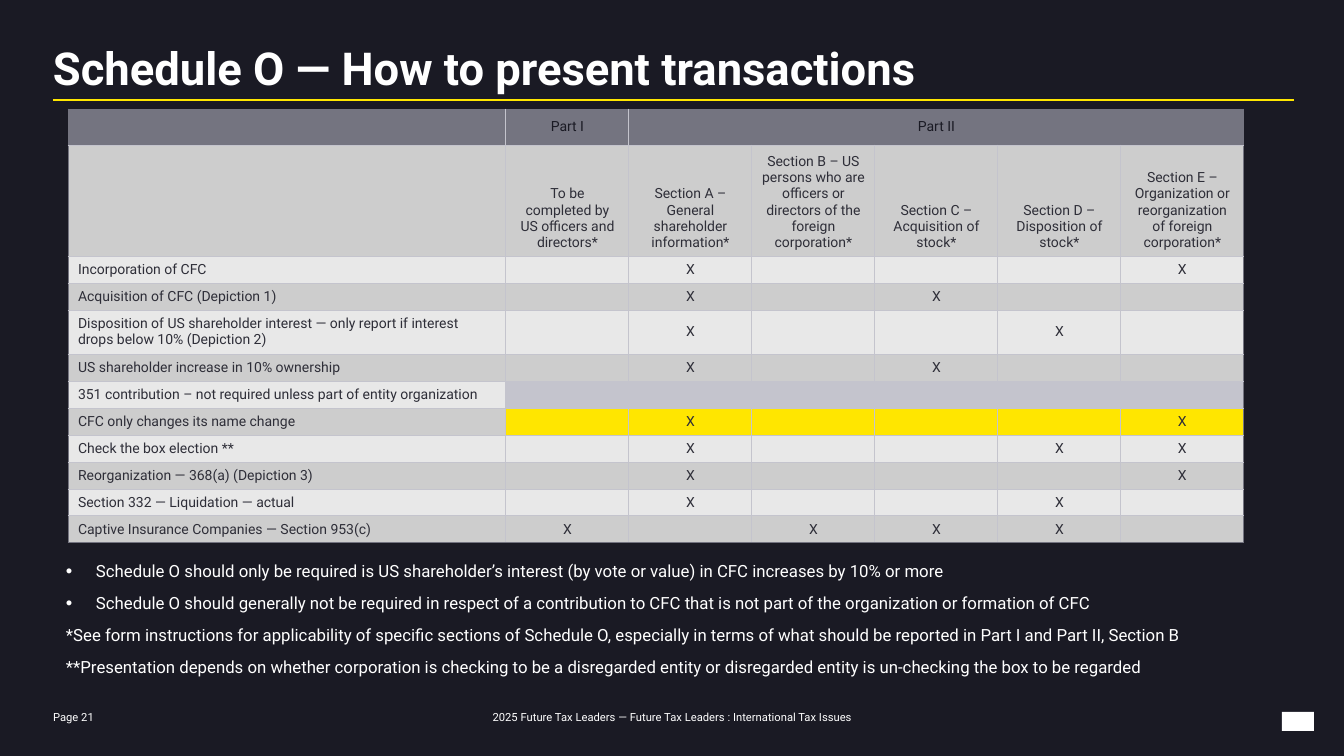
from dataclasses import dataclass

from lxml.etree import SubElement
from pptx import Presentation
from pptx.dml.color import RGBColor
from pptx.enum.shapes import MSO_CONNECTOR, MSO_SHAPE
from pptx.enum.text import MSO_ANCHOR as Anchor, PP_ALIGN as Align
from pptx.oxml.ns import qn
from pptx.util import Emu, Pt

TITLE = "Schedule O — How to present transactions"
PAGE = "Page 21"
FOOTER = "2025 Future Tax Leaders — Future Tax Leaders : International Tax Issues"
PARTS = ["", "Part I", "Part II"]
SECTIONS = [
    "",
    "To be completed by US officers and directors*",
    "Section A – General shareholder information*",
    "Section B – US persons who are officers or directors of the foreign corporation*",
    "Section C – Acquisition of stock*",
    "Section D – Disposition of stock*",
    "Section E – Organization or reorganization of foreign corporation*",
]
# Transaction and the columns marked with an X
TRANSACTIONS = [
    ("Incorporation of CFC", (2, 6)),
    ("Acquisition of CFC (Depiction 1)", (2, 4)),
    ("Disposition of US shareholder interest — only report if interest drops below 10% (Depiction 2)", (2, 5)),
    ("US shareholder increase in 10% ownership", (2, 4)),
    ("351 contribution – not required unless part of entity organization", ()),
    ("CFC only changes its name change", (2, 6)),
    ("Check the box election **", (2, 5, 6)),
    ("Reorganization — 368(a) (Depiction 3)", (2, 6)),
    ("Section 332 — Liquidation — actual", (2, 5)),
    ("Captive Insurance Companies — Section 953(c)", (1, 3, 4, 5)),
]
# Note and whether it has a bullet
NOTES = [
    ("Schedule O should only be required is US shareholder’s interest (by vote or value) in CFC increases by 10% or more", True),
    ("Schedule O should generally not be required in respect of a contribution to CFC that is not part of the organization or formation of CFC", True),
    ("*See form instructions for applicability of specific sections of Schedule O, especially in terms of what should be reported in Part I and Part II, Section B", False),
    ("**Presentation depends on whether corporation is checking to be a disregarded entity or disregarded entity is un-checking the box to be regarded", False),
]


@dataclass(frozen=True)
class Theme:
    font: str = "Roboto"
    background: str = "1A1A24"
    white: str = "FFFFFF"
    yellow: str = "FFE600"
    text: str = "2E2E38"
    header: str = "747480"
    grid: str = "C4C4CD"
    dark_band: str = "CDCDCD"
    light_band: str = "E8E8E8"
    title_size: float = 32.4
    note_size: float = 12
    table_size: float = 10
    footer_size: float = 8
    rule_width: float = 1.5
    border_width: float = 0.75


THEME = Theme()
ROW_FILLS = {6: THEME.grid, 7: THEME.yellow}
COLUMN_WIDTHS = [438] + [123] * 6
ROW_HEIGHTS = [36, 111, 27, 27, 44] + [27] * 7
LAST_ROW, LAST_COLUMN = len(ROW_HEIGHTS) - 1, len(COLUMN_WIDTHS) - 1
INDENT = 30


def px(length):
    return Emu(round(length * 914400 / 100.8))


def rgb(color):
    return RGBColor.from_string(color)


def write(paragraph, text, size, color, bold=False, align=Align.LEFT):
    paragraph.alignment = align
    run = paragraph.add_run()
    run.text = text
    run.font.color.rgb = rgb(color)
    for name, value in {"name": THEME.font, "size": Pt(size), "bold": bold}.items():
        setattr(run.font, name, value)


def add_text_frame(slide, box, anchor=Anchor.TOP):
    frame = slide.shapes.add_textbox(*map(px, box)).text_frame
    settings = {"word_wrap": True, "vertical_anchor": anchor, "margin_left": 0,
                "margin_right": 0, "margin_top": 0, "margin_bottom": 0}
    for name, value in settings.items():
        setattr(frame, name, value)
    return frame


def add_bullet(paragraph):
    properties = paragraph._p.get_or_add_pPr()
    properties.set("marL", str(px(INDENT)))
    properties.set("indent", str(-px(INDENT)))
    color = SubElement(properties, qn("a:buClr"))
    SubElement(color, qn("a:srgbClr"), val=THEME.white)
    SubElement(properties, qn("a:buSzPct"), val="110000")
    SubElement(properties, qn("a:buFont"), typeface="Arial")
    SubElement(properties, qn("a:buChar"), char="•")


def add_notes(slide):
    frame = add_text_frame(slide, (66, 561, 1235, 180))
    for index, (text, bulleted) in enumerate(NOTES):
        paragraph = frame.add_paragraph() if index else frame.paragraphs[0]
        write(paragraph, text, THEME.note_size, THEME.white)
        paragraph.space_before = Pt(0.2 * THEME.note_size)
        paragraph.space_after = Pt(6)
        if bulleted:
            add_bullet(paragraph)


def set_borders(cell, outer_edges):
    """Draw four borders; outer_edges tells which lie on the table's outline."""
    properties = cell._tc.get_or_add_tcPr()
    for edge, is_outer in outer_edges.items():
        line = SubElement(properties, qn(f"a:ln{edge}"), w=str(Pt(THEME.border_width)))
        fill = SubElement(line, qn("a:solidFill"))
        SubElement(fill, qn("a:srgbClr"), val=THEME.header if is_outer else THEME.grid)


def cell_fill(row, column):
    if row == 0:
        return THEME.header
    if column and row in ROW_FILLS:
        return ROW_FILLS[row]
    return THEME.dark_band if row % 2 else THEME.light_band


def fill_cell(cell, row, column, text):
    right = LAST_COLUMN if cell.is_merge_origin else column
    set_borders(cell, {"L": column == 0, "R": right == LAST_COLUMN,
                       "T": row == 0, "B": row == LAST_ROW})
    cell.fill.solid()
    cell.fill.fore_color.rgb = rgb(cell_fill(row, column))
    cell.vertical_anchor = Anchor.BOTTOM if row == 1 else Anchor.MIDDLE
    paragraph = cell.text_frame.paragraphs[0]
    if text:
        write(paragraph, text, THEME.table_size, THEME.text if row else THEME.background,
              align=Align.CENTER if column else Align.LEFT)
    else:
        SubElement(paragraph._p, qn("a:endParaRPr"), sz=str(int(THEME.table_size * 100)))


def add_transactions_table(slide):
    marked_rows = [[label] + ["X" if column in marks else "" for column in range(1, LAST_COLUMN + 1)]
                   for label, marks in TRANSACTIONS]
    rows = [PARTS + [""] * (LAST_COLUMN + 1 - len(PARTS)), SECTIONS] + marked_rows
    table = slide.shapes.add_table(len(rows), len(COLUMN_WIDTHS), px(68), px(109),
                                   px(sum(COLUMN_WIDTHS)), px(sum(ROW_HEIGHTS))).table
    table.first_row = table.horz_banding = False
    for column, width in zip(table.columns, COLUMN_WIDTHS):
        column.width = px(width)
    for row, height in zip(table.rows, ROW_HEIGHTS):
        row.height = px(height)
    table.cell(0, 2).merge(table.cell(0, LAST_COLUMN))
    for row, texts in enumerate(rows):
        for column, text in enumerate(texts):
            fill_cell(table.cell(row, column), row, column, text)


def add_title_rule(slide):
    rule = slide.shapes.add_connector(MSO_CONNECTOR.STRAIGHT, px(53), px(100), px(1294), px(100))
    rule.line.color.rgb = rgb(THEME.yellow)
    rule.line.width = Pt(THEME.rule_width)
    SubElement(rule._element.spPr, qn("a:effectLst"))


def add_corner_mark(slide):
    mark = slide.shapes.add_shape(MSO_SHAPE.RECTANGLE, px(1282), px(712), px(32), px(19))
    mark.shadow.inherit = False
    mark.fill.solid()
    mark.fill.fore_color.rgb = rgb(THEME.white)
    mark.line.fill.background()


def main():
    presentation = Presentation()
    presentation.slide_width, presentation.slide_height = px(1344), px(756)
    slide = presentation.slides.add_slide(presentation.slide_layouts[6])
    slide.background.fill.solid()
    slide.background.fill.fore_color.rgb = rgb(THEME.background)

    footer = add_text_frame(slide, (486, 710, 373, 14), Anchor.MIDDLE)
    write(footer.paragraphs[0], FOOTER, THEME.footer_size, THEME.white, align=Align.CENTER)
    add_corner_mark(slide)
    add_title_rule(slide)
    title = add_text_frame(slide, (53, 40, 1238, 51))
    write(title.paragraphs[0], TITLE, THEME.title_size, THEME.white, bold=True)
    page = add_text_frame(slide, (53, 710, 56, 13))
    write(page.paragraphs[0], PAGE, THEME.footer_size, THEME.white)
    add_notes(slide)
    add_transactions_table(slide)
    presentation.save("out.pptx")


if __name__ == "__main__":
    main()
